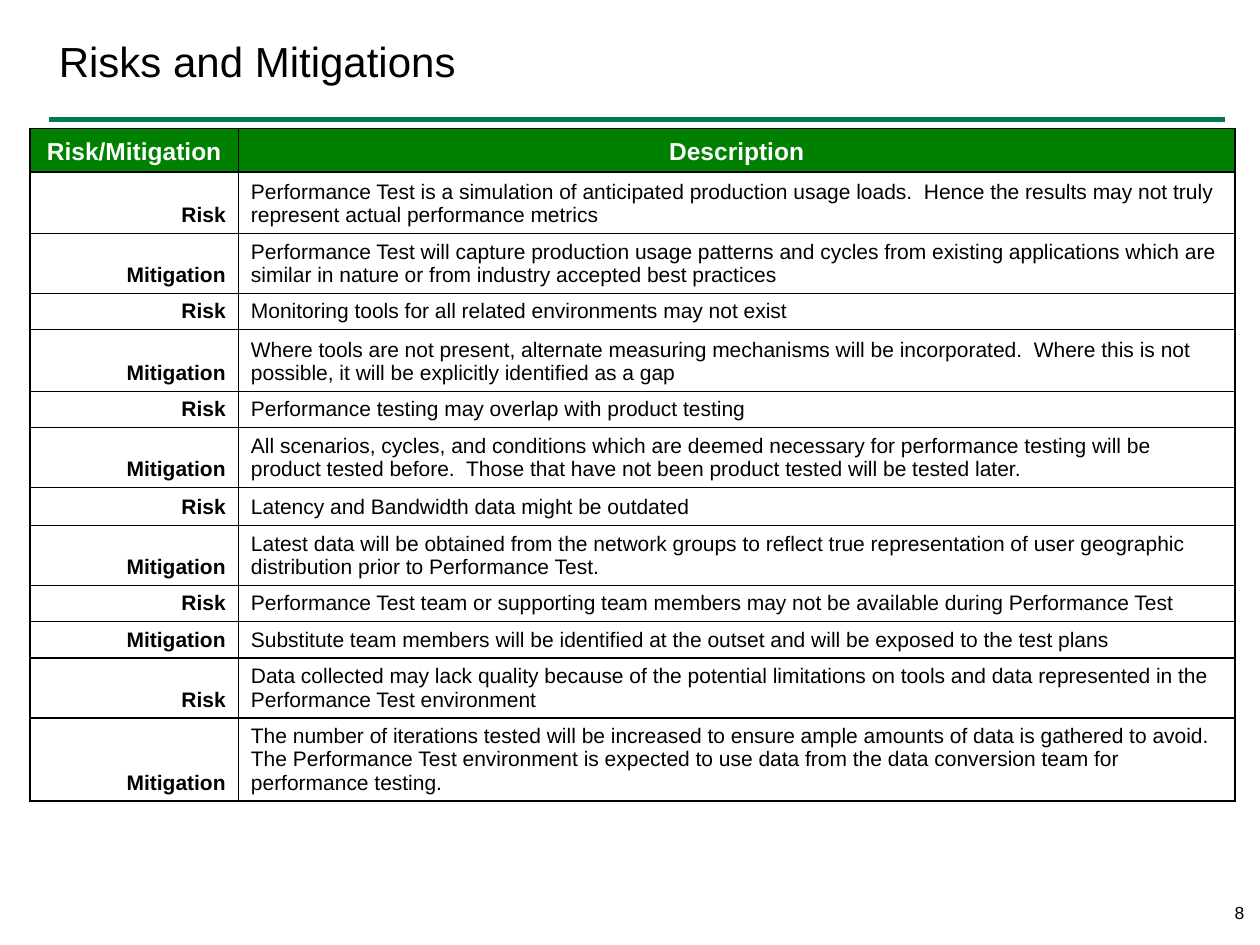
from lxml.etree import SubElement
from pptx import Presentation
from pptx.dml.color import RGBColor
from pptx.enum.shapes import MSO_CONNECTOR
from pptx.enum.text import MSO_ANCHOR, MSO_AUTO_SIZE, PP_ALIGN
from pptx.oxml.ns import qn
from pptx.util import Pt

FONT = "Arial"
COLORS = {
    "text": "000000",
    "rule": "007A50",
    "header": "008000",
    "header_text": "FFFFFF",
    "cell": "FFFFFF",
    "border": "000000",
}
HEADINGS = ("Risk/Mitigation", "Description")
RISKS = [
    ("Performance Test is a simulation of anticipated production usage loads.  "
     "Hence the results may not truly represent actual performance metrics",
     "Performance Test will capture production usage patterns and cycles from existing "
     "applications which are similar in nature or from industry accepted best practices"),
    ("Monitoring tools for all related environments may not exist",
     "Where tools are not present, alternate measuring mechanisms will be incorporated.  "
     "Where this is not possible, it will be explicitly identified as a gap"),
    ("Performance testing may overlap with product testing",
     "All scenarios, cycles, and conditions which are deemed necessary for performance "
     "testing will be product tested before.  Those that have not been product tested "
     "will be tested later."),
    ("Latency and Bandwidth data might be outdated",
     "Latest data will be obtained from the network groups to reflect true representation "
     "of user geographic distribution prior to Performance Test."),
    ("Performance Test team or supporting team members may not be available during "
     "Performance Test",
     "Substitute team members will be identified at the outset and will be exposed to "
     "the test plans"),
    ("Data collected may lack quality because of the potential limitations on tools and "
     "data represented in the Performance Test environment",
     "The number of iterations tested will be increased to ensure ample amounts of data "
     "is gathered to avoid.  The Performance Test environment is expected to use data "
     "from the data conversion team for  performance testing."),
]
COLUMN_WIDTHS = (119, 569.5)
ROW_HEIGHTS = (25, 35, 34.3, 20.6, 35.3, 20.6, 34.3, 21.7, 34.3, 20.6, 20.6, 34.3, 47.5)


def rgb(name):
    return RGBColor.from_string(COLORS[name])


def write(text_frame, text, size, color="text", bold=False, align=PP_ALIGN.LEFT):
    paragraph = text_frame.paragraphs[0]
    paragraph.alignment = align
    run = paragraph.add_run()
    run.text = text
    run.font.name = FONT
    run.font.size = Pt(size)
    run.font.bold = bold
    run.font.color.rgb = rgb(color)
    return paragraph


def add_title(slide, text):
    title = slide.shapes.title
    title.left, title.top, title.width, title.height = Pt(30), Pt(6.5), Pt(587.5), Pt(56)
    frame = title.text_frame
    frame.auto_size = MSO_AUTO_SIZE.NONE
    frame.vertical_anchor = MSO_ANCHOR.MIDDLE
    frame.margin_left = frame.margin_right = Pt(3.6)
    write(frame, text, 24)


def add_rule(slide):
    rule = slide.shapes.add_connector(
        MSO_CONNECTOR.STRAIGHT, Pt(28), Pt(68.4), Pt(700), Pt(68.4))
    rule.line.color.rgb = rgb("rule")
    rule.line.width = Pt(3)
    SubElement(rule._element.spPr, qn("a:effectLst"))


def add_borders(cell):
    properties = cell._tc.get_or_add_tcPr()
    for side in ("lnL", "lnR", "lnT", "lnB"):
        line = SubElement(properties, qn(f"a:{side}"), w=str(Pt(1)))
        fill = SubElement(line, qn("a:solidFill"))
        SubElement(fill, qn("a:srgbClr"), val=COLORS["border"])


def fill_cell(cell, text, fill, **text_format):
    add_borders(cell)
    cell.fill.solid()
    cell.fill.fore_color.rgb = rgb(fill)
    cell.vertical_anchor = MSO_ANCHOR.BOTTOM
    write(cell.text_frame, text, **text_format)


def add_risk_table(slide):
    table = slide.shapes.add_table(
        len(ROW_HEIGHTS), len(COLUMN_WIDTHS), Pt(17.2), Pt(73.4),
        Pt(sum(COLUMN_WIDTHS)), Pt(sum(ROW_HEIGHTS))).table
    for column, width in zip(table.columns, COLUMN_WIDTHS):
        column.width = Pt(width)
    for row, height in zip(table.rows, ROW_HEIGHTS):
        row.height = Pt(height)
    for index, heading in enumerate(HEADINGS):
        fill_cell(table.cell(0, index), heading, "header", size=14,
                  color="header_text", bold=True, align=PP_ALIGN.CENTER)
    entries = [entry for pair in RISKS for entry in zip(("Risk", "Mitigation"), pair)]
    for index, (kind, description) in enumerate(entries, start=1):
        fill_cell(table.cell(index, 0), kind, "cell", size=12, bold=True,
                  align=PP_ALIGN.RIGHT)
        fill_cell(table.cell(index, 1), description, "cell", size=12)


def add_page_number(slide, number):
    box = slide.shapes.add_textbox(Pt(550), Pt(514), Pt(168), Pt(28))
    box.text_frame.word_wrap = True
    paragraph = write(box.text_frame, number, 10, align=PP_ALIGN.RIGHT)
    paragraph.line_spacing = 0.8


def main():
    presentation = Presentation()
    presentation.slide_width, presentation.slide_height = Pt(720), Pt(540)
    slide = presentation.slides.add_slide(
        presentation.slide_layouts.get_by_name("Title Only"))
    add_rule(slide)
    add_title(slide, "Risks and Mitigations")
    add_risk_table(slide)
    add_page_number(slide, "8")
    presentation.save("out.pptx")


if __name__ == "__main__":
    main()
